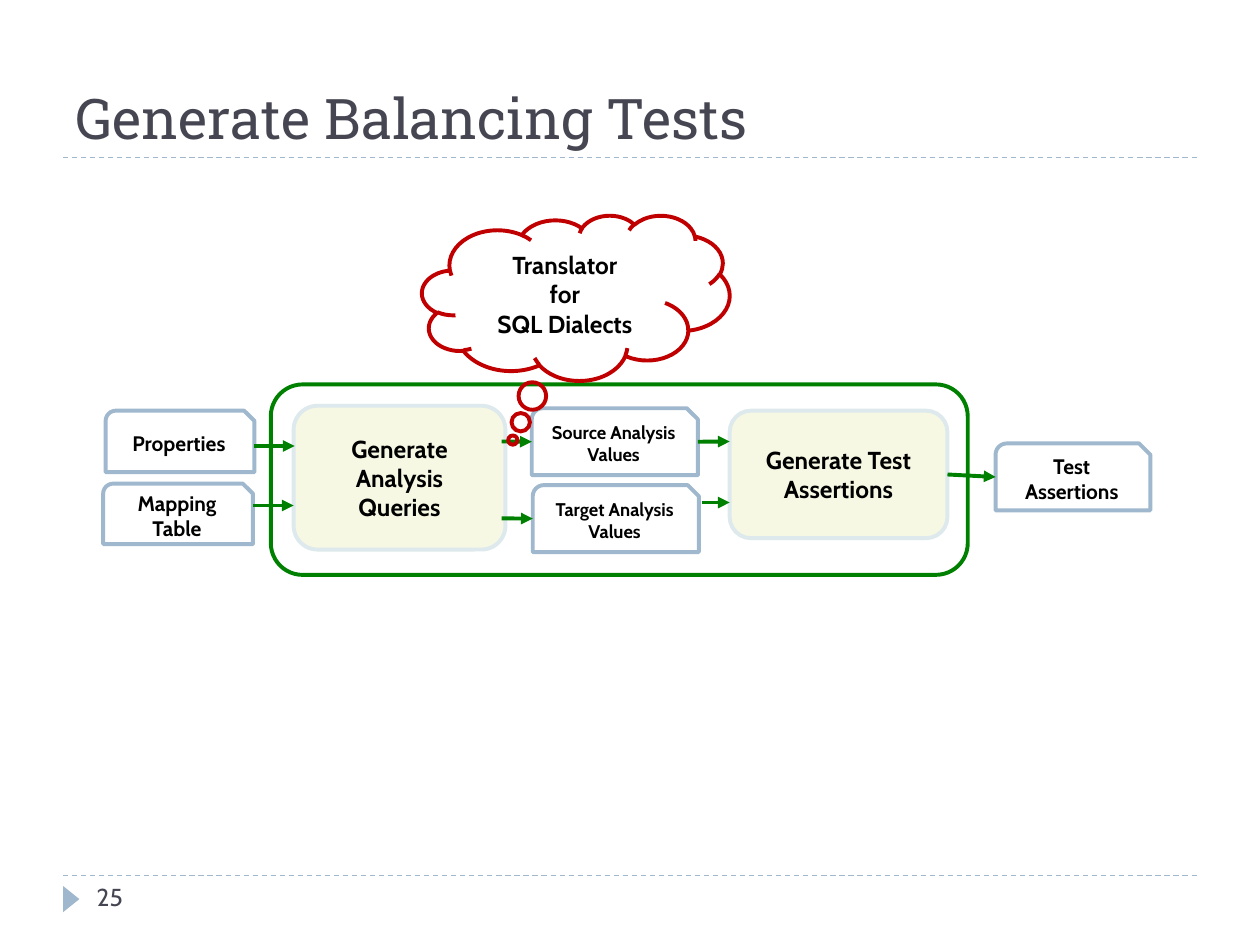
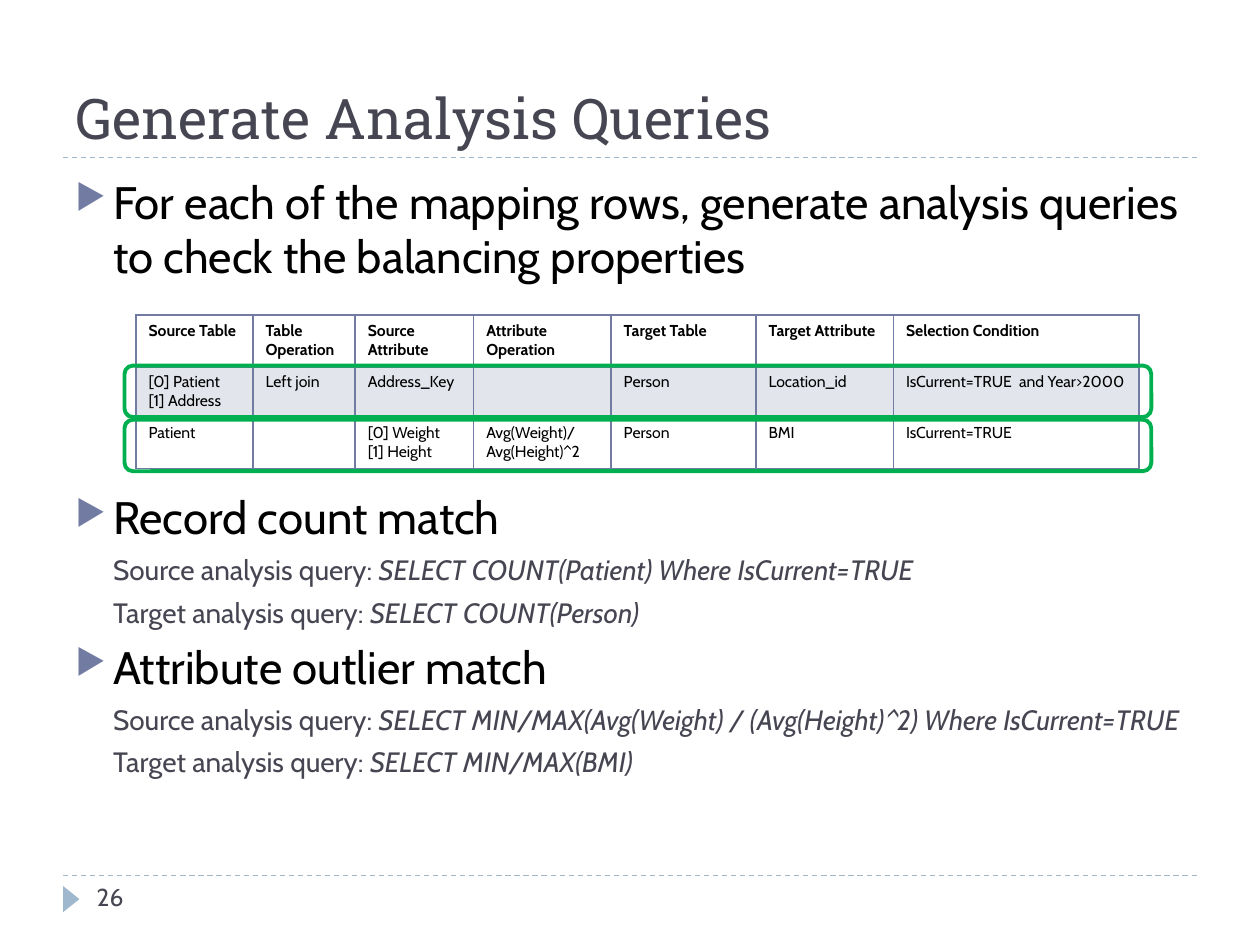
from pptx import Presentation
from pptx.dml.color import RGBColor
from pptx.enum.dml import MSO_LINE
from pptx.enum.shapes import MSO_CONNECTOR, MSO_SHAPE
from pptx.enum.text import MSO_ANCHOR, PP_ALIGN
from pptx.oxml.ns import qn
from pptx.util import Cm, Pt
from lxml import etree

STRAIGHT = MSO_CONNECTOR.STRAIGHT
DASH = MSO_LINE.DASH
ROUNDED = MSO_SHAPE.ROUNDED_RECTANGLE
SNIPPED = MSO_SHAPE.SNIP_ROUND_RECTANGLE
CLOUD = MSO_SHAPE.CLOUD_CALLOUT
TRIANGLE = MSO_SHAPE.ISOSCELES_TRIANGLE
CENTER = PP_ALIGN.CENTER
MIDDLE, BOTTOM = MSO_ANCHOR.MIDDLE, MSO_ANCHOR.BOTTOM
RIGHT_SIDE, LEFT_SIDE = 3, 1

BLACK = RGBColor(0x00, 0x00, 0x00)
SLATE = RGBColor(0x46, 0x46, 0x53)
SKY = RGBColor(0x9F, 0xB8, 0xCD)
INDIGO = RGBColor(0x72, 0x7C, 0xA3)
PALE_INDIGO = RGBColor(0xE3, 0xE5, 0xED)
CREAM = RGBColor(0xF6, 0xF8, 0xE4)
MIST = RGBColor(0xDD, 0xE9, 0xEC)
FLOW_GREEN = RGBColor(0x00, 0x80, 0x00)
MARK_GREEN = RGBColor(0x00, 0xB0, 0x50)
RED = RGBColor(0xC0, 0x00, 0x00)

BODY_FONT = "Cabin"
TITLE_FONT = "Roboto Slab"


def style_runs(paragraph, size, color=BLACK, bold=False, font=BODY_FONT):
    for span in paragraph.runs:
        span.font.name = font
        span.font.size = Pt(size)
        span.font.bold = bold
        span.font.color.rgb = color


def add_outline(page, kind, area, color, fill=None, text="", size=12):
    shape = page.shapes.add_shape(kind, *[Cm(length) for length in area])
    shape.shadow.inherit = False
    if fill is None:
        shape.fill.background()
    else:
        shape.fill.solid()
        shape.fill.fore_color.rgb = fill
    shape.line.color.rgb = color
    shape.line.width = Pt(2.25)
    if text:
        shape.text_frame.text = text
        shape.text_frame.word_wrap = True
        shape.text_frame.vertical_anchor = MIDDLE
        for paragraph in shape.text_frame.paragraphs:
            paragraph.alignment = CENTER
            style_runs(paragraph, size, bold=True)
    return shape


deck = Presentation()
deck.slide_width = Cm(25.4)
deck.slide_height = Cm(19.05)

pages = []
for number, title in ((25, "Generate Balancing Tests"), (26, "Generate Analysis Queries")):
    page = deck.slides.add_slide(deck.slide_layouts[6])
    pages.append(page)
    for y in (17.65, 3.18):
        rule = page.shapes.add_connector(STRAIGHT, Cm(1.27), Cm(y), Cm(24.13), Cm(y))
        rule.line.color.rgb = SKY
        rule.line.width = Pt(0.75)
        rule.line.dash_style = DASH
        etree.SubElement(rule._element.spPr, qn("a:effectLst"))
    marker = page.shapes.add_shape(TRIANGLE, Cm(1.17), Cm(17.96), Cm(0.53), Cm(0.33))
    marker.rotation = 90
    marker.shadow.inherit = False
    marker.fill.solid()
    marker.fill.fore_color.rgb = SKY
    marker.line.fill.background()

    title_box = page.shapes.add_textbox(Cm(1.27), Cm(0.43), Cm(22.86), Cm(2.74))
    title_box.text_frame.word_wrap = True
    title_box.text_frame.vertical_anchor = BOTTOM
    title_box.text_frame.text = title
    style_runs(title_box.text_frame.paragraphs[0], 32, SLATE, font=TITLE_FONT)

    number_box = page.shapes.add_textbox(Cm(1.7), Cm(17.65), Cm(5.51), Cm(1.02))
    number_box.text_frame.word_wrap = True
    number_box.text_frame.text = str(number)
    style_runs(number_box.text_frame.paragraphs[0], 14, SLATE)

flow_page, query_page = pages

add_outline(flow_page, ROUNDED, (5.46, 7.75, 14.05, 3.84), FLOW_GREEN)
steps = {}
for text, area in (
    ("Generate Analysis Queries", (5.92, 8.18, 4.27, 2.9)),
    ("Generate Test Assertions", (14.71, 8.28, 4.39, 2.57)),
):
    steps[text] = add_outline(flow_page, ROUNDED, area, MIST, CREAM, text, 14)
for text, area, size in (
    ("Properties", (2.13, 8.28, 3, 1.24), 12),
    ("Mapping Table", (2.08, 9.75, 3.02, 1.22), 12),
    ("Source Analysis Values", (10.72, 8.23, 3.35, 1.35), 10.5),
    ("Target Analysis Values", (10.74, 9.78, 3.35, 1.35), 10.5),
    ("Test\nAssertions", (20.07, 8.94, 3.12, 1.35), 12),
):
    steps[text] = add_outline(flow_page, SNIPPED, area, SKY, text=text, size=size)

for start_x, end_x, y, source, target in (
    (5.13, 5.94, 8.99, None, None),
    (5.11, 5.92, 10.19, None, None),
    (10.11, 10.67, 8.9, None, "Source Analysis Values"),
    (10.11, 10.67, 10.45, None, "Target Analysis Values"),
    (14.12, 14.71, 8.9, "Source Analysis Values", None),
    (14.15, 14.71, 10.13, None, None),
    (19.02, 19.99, 9.57, "Generate Test Assertions", "Test\nAssertions"),
):
    arrow = flow_page.shapes.add_connector(STRAIGHT, Cm(start_x), Cm(y), Cm(end_x), Cm(y))
    if source:
        arrow.begin_connect(steps[source], RIGHT_SIDE)
    if target:
        arrow.end_connect(steps[target], LEFT_SIDE)
    arrow.line.color.rgb = FLOW_GREEN
    arrow.line.width = Pt(2.25)
    etree.SubElement(arrow.line._get_or_add_ln(), qn("a:tailEnd"), type="triangle")
    etree.SubElement(arrow._element.spPr, qn("a:effectLst"))

cloud = add_outline(flow_page, CLOUD, (8.51, 4.34, 6.2, 3.33), RED,
                    text="Translator\nfor\nSQL Dialects", size=14)
cloud.adjustments[0] = -0.205
cloud.adjustments[1] = 0.861

body = query_page.shapes.add_textbox(Cm(1.27), Cm(3.38), Cm(22.86), Cm(13.72)).text_frame
body.word_wrap = True
SOURCE_QUERY = "Source analysis query: "
TARGET_QUERY = "Target analysis query: "
TABLE_GAP = 118
for index, (text, query, space) in enumerate((
    ("For each of the mapping rows, generate analysis queries to check the balancing properties", "", 6),
    ("Record count match", "", TABLE_GAP),
    (SOURCE_QUERY, "SELECT COUNT(Patient) Where IsCurrent=TRUE", 5),
    (TARGET_QUERY, "SELECT COUNT(Person)", 5),
    ("Attribute outlier match", "", 6),
    (SOURCE_QUERY, "SELECT MIN/MAX(Avg(Weight) / (Avg(Height)^2) Where IsCurrent=TRUE", 5),
    (TARGET_QUERY, "SELECT MIN/MAX(BMI)", 5),
)):
    paragraph = body.add_paragraph() if index else body.paragraphs[0]
    paragraph.text = text
    paragraph.space_before = Pt(space)
    properties = paragraph._p.get_or_add_pPr()
    properties.set("marL", str(Cm(0.76)))
    if query:
        paragraph.level = 1
        properties.set("indent", "0")
        span = paragraph.add_run()
        span.text = query
        span.font.italic = True
        style_runs(paragraph, 16, SLATE)
    else:
        properties.set("indent", str(-Cm(0.76)))
        bullet_color = etree.SubElement(properties, qn("a:buClr"))
        etree.SubElement(bullet_color, qn("a:srgbClr"), val=str(INDIGO))
        etree.SubElement(properties, qn("a:buSzPct"), val="76000")
        etree.SubElement(properties, qn("a:buChar"), char="▶")
        style_runs(paragraph, 26)

mapping_rows = (
    ("Source Table", "Table Operation", "Source Attribute", "Attribute Operation",
     "Target Table", "Target Attribute", "Selection Condition"),
    ("[0] Patient\n[1] Address", "Left join", "Address_Key", "",
     "Person", "Location_id", "IsCurrent=TRUE  and Year>2000"),
    ("Patient", "", "[0] Weight\n[1] Height", "Avg(Weight)/ Avg(Height)^2",
     "Person", "BMI", "IsCurrent=TRUE"),
)
column_widths = (2.36, 2.06, 2.39, 2.77, 2.92, 2.77, 4.95)
mapping = query_page.shapes.add_table(
    len(mapping_rows), len(column_widths), Cm(2.74), Cm(6.35), Cm(20.22), Cm(3.09)).table
mapping.horz_banding = False
for column, width in zip(mapping.columns, column_widths):
    column.width = Cm(width)
for row_index, texts in enumerate(mapping_rows):
    mapping.rows[row_index].height = Cm(1.03)
    for column_index, text in enumerate(texts):
        cell = mapping.cell(row_index, column_index)
        cell.text_frame.text = text
        for paragraph in cell.text_frame.paragraphs:
            style_runs(paragraph, 9, bold=row_index == 0)
        for side in ("lnL", "lnR", "lnT", "lnB"):
            header_edge = (row_index, side) in ((0, "lnB"), (1, "lnT"))
            border = etree.SubElement(cell._tc.get_or_add_tcPr(), qn("a:" + side),
                                      w=str(Pt(2 if header_edge else 1)))
            border_fill = etree.SubElement(border, qn("a:solidFill"))
            etree.SubElement(border_fill, qn("a:srgbClr"), val=str(INDIGO))
        if row_index == 1:
            cell.fill.solid()
            cell.fill.fore_color.rgb = PALE_INDIGO
        else:
            cell.fill.background()

for top in (7.37, 8.46):
    add_outline(query_page, ROUNDED, (2.51, top, 20.7, 1.04), MARK_GREEN)

deck.save("out.pptx")
